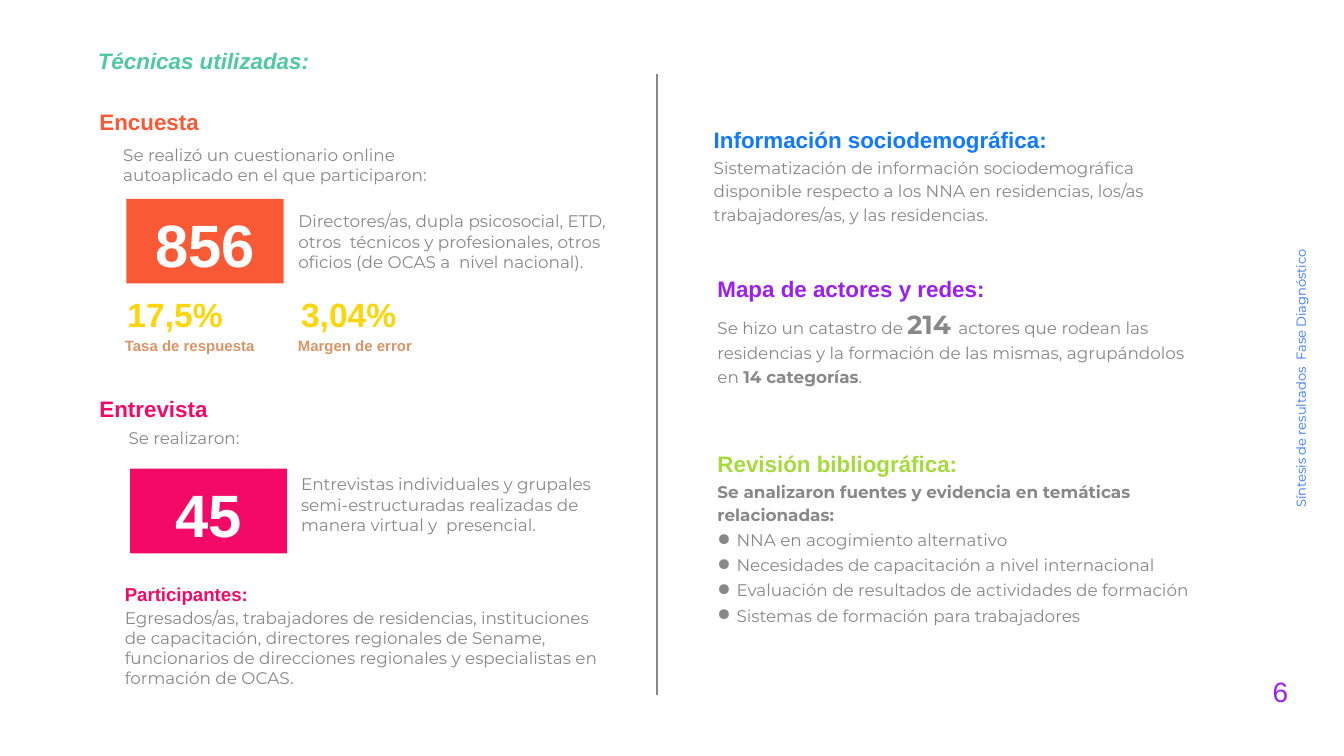
import pptx
import pptx.util
import pptx.dml.color
import pptx.enum.shapes
import pptx.enum.text
import pptx.oxml
import pptx.oxml.ns
import lxml.etree

Cm = pptx.util.Cm
Pt = pptx.util.Pt
CENTER = pptx.enum.text.PP_ALIGN.CENTER
MIDDLE = pptx.enum.text.MSO_ANCHOR.MIDDLE

GRAY = "888888"
ORANGE = "FA5936"
PINK = "F20A66"
YELLOW = "FCD608"
TAN = "D99466"
PURPLE = "9C1FF2"
WIDE = (0.25, 0.25)
FLAT = (0, 0.03)
LOW = (0, 0.1)


def color(value):
    return pptx.dml.color.RGBColor.from_string(value)


def add_text(place, paragraphs, inset=FLAT, anchor=None, align=None, spacing=None):
    box = slide.shapes.add_textbox(*[Cm(length) for length in place])
    frame = box.text_frame
    frame.word_wrap = True
    frame.margin_left = frame.margin_right = Cm(inset[0])
    frame.margin_top = frame.margin_bottom = Cm(inset[1])
    if anchor is not None:
        frame.vertical_anchor = anchor
    for index, (content, size, fill, style) in enumerate(paragraphs):
        paragraph = frame.paragraphs[0] if index == 0 else frame.add_paragraph()
        if index:
            paragraph.space_before = Pt(1)
        if spacing:
            paragraph.line_spacing = spacing
        if align is not None:
            paragraph.alignment = align
        if "bullet" in style:
            properties = paragraph._p.get_or_add_pPr()
            properties.set("marL", str(Cm(0.36)))
            properties.set("indent", str(-Cm(0.36)))
            bullet = lxml.etree.SubElement(properties, pptx.oxml.ns.qn("a:buChar"))
            bullet.set("char", "●")
        font = paragraph.font
        font.name = "Montserrat" if "body" in style else "Arial"
        font.size = Pt(size)
        font.color.rgb = color(fill)
        font.bold = "bold" in style
        font.italic = "italic" in style
        runs = [(content, None)] if isinstance(content, str) else content
        for text, emphasis in runs:
            run = paragraph.add_run()
            run.text = text
            if emphasis:
                run.font.bold = True
                run.font.size = Pt(emphasis)
    return box


presentation = pptx.Presentation()
presentation.slide_width = Cm(25.4)
presentation.slide_height = Cm(14.29)
slide = presentation.slides.add_slide(presentation.slide_layouts[6])

add_text((1.6, 0.64, 8.97, 1.09), [("Técnicas utilizadas:", 12, "4FC9A3", "bold italic")], WIDE)

for top, heading, fill in [(2.01, "Encuesta", ORANGE), (7.44, "Entrevista", PINK)]:
    add_text((1.88, top, 4.6, 0.66), [(heading, 12, fill, "bold")])

for left, top, width, text, inset in [
    (2.08, 2.49, 7.65, "Se realizó un cuestionario online autoaplicado en el que participaron:", WIDE),
    (2.18, 7.9, 6.73, "Se realizaron:", WIDE),
    (5.64, 3.89, 6.07, "Directores/as, dupla psicosocial, ETD, otros  técnicos y profesionales, otros oficios (de OCAS a  nivel nacional).", LOW),
    (5.69, 8.86, 6.32, "Entrevistas individuales y grupales semi-estructuradas realizadas de manera virtual y  presencial.", LOW),
]:
    add_text((left, top, width, 1.09), [(text, 9, GRAY, "body")], inset)

for left, top, number, fill in [(2.39, 3.76, "856", ORANGE), (2.46, 8.86, "45", PINK)]:
    card = slide.shapes.add_shape(
        pptx.enum.shapes.MSO_SHAPE.RECTANGLE, Cm(left), Cm(top), Cm(2.97), Cm(1.6)
    )
    card.shadow.inherit = False
    card.fill.solid()
    card.fill.fore_color.rgb = color(fill)
    card.line.fill.background()
    add_text((left + 0.08, top + 0.1, 2.82, 1.5), [(number, 32, "FFFFFF", "bold")], WIDE, MIDDLE, CENTER)

for value_left, label_left, value, label in [
    (2.41, 2.11, "17,5%", "Tasa de respuesta"),
    (5.69, 5.38, "3,04%", "Margen de error"),
]:
    add_text((value_left, 5.28, 2.64, 1.32), [(value, 18, YELLOW, "bold")], FLAT, MIDDLE)
    add_text((label_left, 6.15, 4.06, 0.76), [(label, 8, TAN, "bold")], WIDE, MIDDLE)

add_text((2.11, 10.77, 9.6, 2.77), [
    ("Participantes:", 10, PINK, "bold"),
    ("Egresados/as, trabajadores de residencias, instituciones de capacitación, directores regionales de Sename, funcionarios de direcciones regionales y especialistas en formación de OCAS.", 9, GRAY, "body"),
], WIDE)

divider = slide.shapes.add_connector(
    pptx.enum.shapes.MSO_CONNECTOR.STRAIGHT, Cm(12.42), Cm(1.4), Cm(12.42), Cm(13.13)
)
divider.line.color.rgb = color(GRAY)
divider.line.width = Pt(0.75)
lxml.etree.SubElement(divider._element.spPr, pptx.oxml.ns.qn("a:effectLst"))

topics = [
    "NNA en acogimiento alternativo",
    "Necesidades de capacitación a nivel internacional",
    "Evaluación de resultados de actividades de formación",
    "Sistemas de formación para trabajadores",
]
catalog = [
    ("Se hizo un catastro de ", None),
    ("214 ", 14),
    ("actores que rodean las residencias y la formación de las mismas, agrupándolos en ", None),
    ("14 categorías", 9),
    (".", None),
]
for left, top, heading, fill, body in [
    (13.49, 2.21, "Información sociodemográfica:", "0F7AFF", [
        ("Sistematización de información sociodemográfica disponible respecto a los NNA en residencias, los/as trabajadores/as, y las residencias.", 9, GRAY, "body"),
    ]),
    (13.56, 5.03, "Mapa de actores y redes:", PURPLE, [(catalog, 9, GRAY, "body")]),
    (13.56, 8.33, "Revisión bibliográfica:", "A4DB3B", [
        ("Se analizaron fuentes y evidencia en temáticas relacionadas:", 9, GRAY, "body bold"),
        *[(topic, 9, GRAY, "body bullet") for topic in topics],
    ]),
]:
    add_text((left, top, 9.1, 1.09), [(heading, 12, fill, "bold"), *body], LOW, spacing=1.15)

side_label = add_text(
    (21.44, 7.04, 6.1, 0.23),
    [("Síntesis de resultados  Fase Diagnóstico", 7, "2E75FF", "body")],
    (0, 0), align=CENTER, spacing=1.2,
)
side_label.rotation = 270
add_text((24.05, 12.73, 0.61, 0.66), [("6", 15, PURPLE, "")])

presentation.save("out.pptx")
